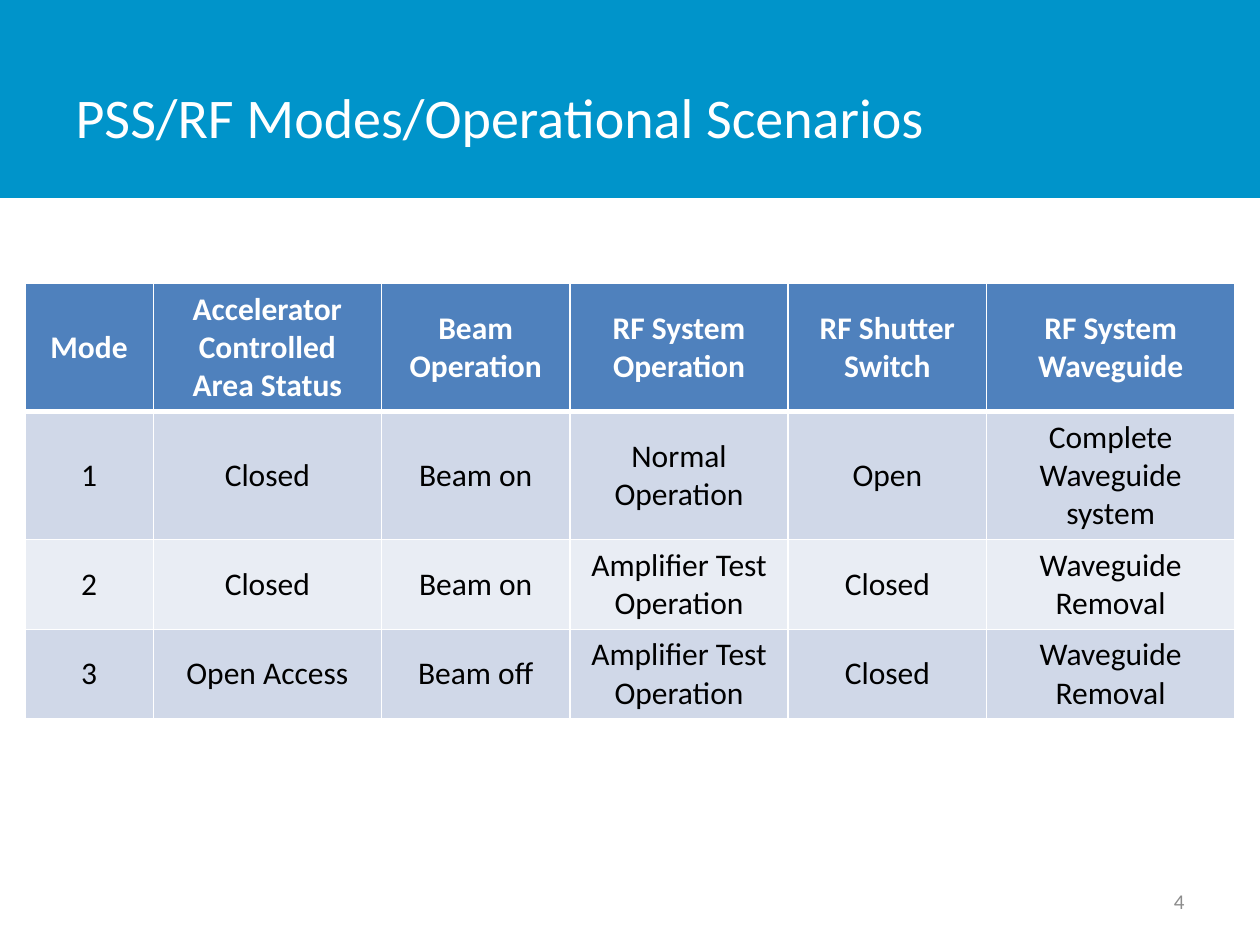
from pptx import Presentation
from pptx.dml.color import RGBColor
from pptx.enum.shapes import MSO_SHAPE
from pptx.enum.text import MSO_ANCHOR, PP_ALIGN
from pptx.oxml.ns import qn
from pptx.util import Cm, Pt
from lxml import etree

RECT = MSO_SHAPE.RECTANGLE
MIDDLE = MSO_ANCHOR.MIDDLE
LEFT, CENTER, RIGHT = PP_ALIGN.LEFT, PP_ALIGN.CENTER, PP_ALIGN.RIGHT

HUES = {"band": "0094CA", "head": "4F81BD", "odd": "D0D8E8",
        "even": "E9EDF4", "white": "FFFFFF", "black": "000000",
        "gray": "8C8C8C"}
FORMATS = {
    "title": {"size": Pt(32), "bold": False},
    "page": {"size": Pt(12), "bold": False},
    "head": {"size": Pt(18), "bold": True},
    "cell": {"size": Pt(18), "bold": False},
}
COLS = [2.59, 4.6, 3.8, 4.4, 4.0, 5.0]
ROWS = [2.54, 2.54, 1.8, 1.8]
MODES = [
    ["Mode", "Accelerator Controlled Area Status", "Beam Operation",
     "RF System Operation", "RF Shutter Switch", "RF System Waveguide"],
    ["1", "Closed", "Beam on", "Normal Operation", "Open",
     "Complete Waveguide system"],
    ["2", "Closed", "Beam on", "Amplifier Test Operation", "Closed",
     "Waveguide Removal"],
    ["3", "Open Access", "Beam off", "Amplifier Test Operation", "Closed",
     "Waveguide Removal"],
]


def paint(fill, hue):
    fill.solid()
    fill.fore_color.rgb = RGBColor.from_string(HUES[hue])


def write(frame, text, style, hue, align):
    frame.word_wrap = True
    para = frame.paragraphs[0]
    para.alignment = align
    run = para.add_run()
    run.text = text
    run.font.name = "Calibri"
    run.font.color.rgb = RGBColor.from_string(HUES[hue])
    for name, value in FORMATS[style].items():
        setattr(run.font, name, value)


def edge(cell, side, width):
    """Draw one white cell border; call before filling the cell."""
    line = etree.SubElement(cell._tc.get_or_add_tcPr(), qn(f"a:{side}"),
                            w=str(Pt(width)))
    fill = etree.SubElement(line, qn("a:solidFill"))
    etree.SubElement(fill, qn("a:srgbClr"), val=HUES["white"])


def add_header(slide, left, top, width, height):
    band = slide.shapes.add_shape(RECT, left, top, width, height)
    band.shadow.inherit = False
    paint(band.fill, "band")
    band.line.fill.background()
    title = slide.shapes.title
    title._element.addprevious(band._element)
    title.left, title.top = left + Cm(1.27), top + Cm(0.76)
    title.width, title.height = Cm(19.84), Cm(3.18)
    title.text_frame.vertical_anchor = MIDDLE
    write(title.text_frame, "PSS/RF Modes/Operational Scenarios",
          "title", "white", LEFT)


def add_modes(slide, left, top):
    grid = slide.shapes.add_table(len(ROWS), len(COLS), left, top,
                                  Cm(sum(COLS)), Cm(sum(ROWS))).table
    for col, width in zip(grid.columns, COLS):
        col.width = Cm(width)
    for i, (row, height) in enumerate(zip(grid.rows, ROWS)):
        row.height = Cm(height)
        hue = "head" if i == 0 else "odd" if i % 2 else "even"
        style, ink = ("cell", "black") if i else ("head", "white")
        for cell, text in zip(row.cells, MODES[i]):
            for side in ("lnL", "lnR", "lnT", "lnB"):
                thick = (i, side) in ((0, "lnB"), (1, "lnT"))
                edge(cell, side, 3 if thick else 1)
            paint(cell.fill, hue)
            cell.vertical_anchor = MIDDLE
            write(cell.text_frame, text, style, ink, CENTER)


def add_page(slide, left, top, width, height):
    box = slide.shapes.add_textbox(left, top, width, height)
    box.text_frame.vertical_anchor = MIDDLE
    write(box.text_frame, "4", "page", "gray", RIGHT)


def main():
    deck = Presentation()
    deck.slide_width, deck.slide_height = Cm(25.4), Cm(19.05)
    slide = deck.slides.add_slide(deck.slide_layouts[5])
    add_header(slide, 0, 0, deck.slide_width, Cm(3.99))
    add_modes(slide, Cm(0.5), Cm(5.72))
    add_page(slide, Cm(18.2), Cm(17.66), Cm(5.93), Cm(1.01))
    deck.save("out.pptx")


if __name__ == "__main__":
    main()
